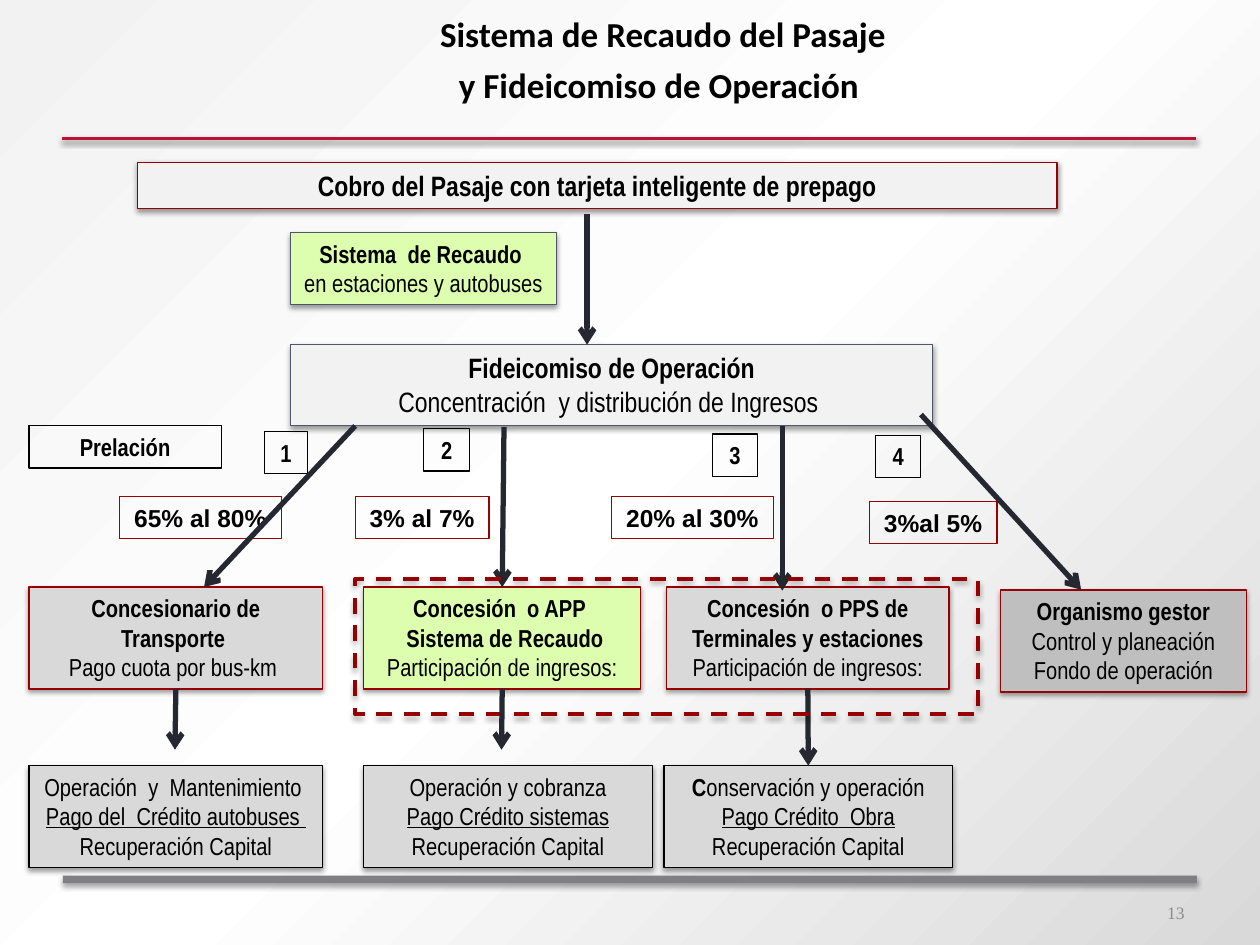
import pptx
import pptx.util
import pptx.dml.color
import pptx.enum.dml
import pptx.enum.shapes
import pptx.enum.text
import pptx.oxml
import pptx.oxml.ns
import lxml.etree

Pt = pptx.util.Pt
qn = pptx.oxml.ns.qn
ALIGN = pptx.enum.text.PP_ALIGN
SHAPES = pptx.enum.shapes

COLORS = {
    "black": "000000", "crimson": "BE0F34", "rule": "807F83", "red": "960000",
    "range": "990000", "slate": "50556B", "arrow": "252731", "pale": "F2F2F2",
    "light": "D9D9D9", "medium": "BFBFBF", "green": "DDFEAF", "number": "8C8C8C",
    "white": "FFFFFF",
}
BOLD = {"bold": True}
UNDERLINE = {"underline": True}
TOP, BOTTOM = 0, 2


def rgb(name):
    return pptx.dml.color.RGBColor.from_string(COLORS[name])


def add_span(para, text, size=14, font="Arial Narrow", color="black",
             bold=False, underline=False):
    span = para.add_run()
    span.text = text
    span.font.size = Pt(size)
    span.font.name = font
    span.font.color.rgb = rgb(color)
    span.font.bold = bold
    span.font.underline = underline


def add_shadow(effects, alpha=38, distance=1.6):
    outer = lxml.etree.SubElement(
        effects, qn("a:outerShdw"), blurRad=str(Pt(3.1)), dist=str(Pt(distance)),
        dir="5400000", rotWithShape="0")
    color = lxml.etree.SubElement(outer, qn("a:srgbClr"), val=COLORS["black"])
    lxml.etree.SubElement(color, qn("a:alpha"), val=str(alpha * 1000))


class Diagram:
    def __init__(self, slide):
        self.slide = slide
        self.shapes = slide.shapes

    def background(self, stops):
        """Fill the slide with a radial gradient centred on the lower right corner."""
        fill = self.slide.background.fill
        fill.gradient()
        gradient = self.slide.element.find(".//" + qn("a:gradFill"))
        for child in list(gradient):
            gradient.remove(child)
        stop_list = lxml.etree.SubElement(gradient, qn("a:gsLst"))
        for position, color in stops:
            stop = lxml.etree.SubElement(stop_list, qn("a:gs"), pos=str(position * 1000))
            lxml.etree.SubElement(stop, qn("a:srgbClr"), val=COLORS[color])
        circle = lxml.etree.SubElement(gradient, qn("a:path"), path="circle")
        lxml.etree.SubElement(circle, qn("a:fillToRect"), l="100000", t="100000")

    def box(self, left, top, width, height, lines=(), fill=None, edge=None,
            edge_width=0.75, shadow=None):
        """Draw a rectangle; each line is a list of (text, format) spans."""
        box = self.shapes.add_shape(SHAPES.MSO_SHAPE.RECTANGLE,
                                    Pt(left), Pt(top), Pt(width), Pt(height))
        if fill:
            box.fill.solid()
            box.fill.fore_color.rgb = rgb(fill)
        else:
            box.fill.background()
        if edge:
            box.line.color.rgb = rgb(edge)
            box.line.width = Pt(edge_width)
        else:
            box.line.fill.background()
        box.shadow.inherit = False
        if shadow is not None:
            add_shadow(box._element.spPr.find(qn("a:effectLst")), **shadow)
        if lines:
            self.fill_text(box.text_frame, lines)
        return box

    def fill_text(self, frame, lines, align=ALIGN.CENTER):
        frame.word_wrap = True
        frame.vertical_anchor = pptx.enum.text.MSO_ANCHOR.TOP
        frame.auto_size = pptx.enum.text.MSO_AUTO_SIZE.SHAPE_TO_FIT_TEXT
        for index, spans in enumerate(lines):
            para = frame.add_paragraph() if index else frame.paragraphs[0]
            para.alignment = align
            for text, style in spans:
                add_span(para, text, **style)

    def text(self, left, top, width, height, lines, align=ALIGN.CENTER):
        box = self.shapes.add_textbox(Pt(left), Pt(top), Pt(width), Pt(height))
        self.fill_text(box.text_frame, lines, align)
        return box.text_frame

    def line(self, start, end, color, width, shadow=None):
        line = self.shapes.add_connector(SHAPES.MSO_CONNECTOR.STRAIGHT,
                                         *(Pt(value) for value in start + end))
        line.line.color.rgb = rgb(color)
        line.line.width = Pt(width)
        effects = lxml.etree.SubElement(line._element.spPr, qn("a:effectLst"))
        if shadow is not None:
            add_shadow(effects, **shadow)
        return line

    def arrow(self, start, end, source=None, target=None):
        """Draw an arrow, joined to the bottom of source and the top of target if given."""
        arrow = self.line(start, end, "arrow", 3)
        lxml.etree.SubElement(arrow.line._get_or_add_ln(), qn("a:tailEnd"), type="arrow")
        if source is not None:
            arrow.begin_connect(source, BOTTOM)
        if target is not None:
            arrow.end_connect(target, TOP)


def main():
    deck = pptx.Presentation()
    deck.slide_width, deck.slide_height = Pt(720), Pt(540)
    page = Diagram(deck.slides.add_slide(deck.slide_layouts[6]))
    soft, deep = {}, {"alpha": 35, "distance": 1.8}

    page.background([(0, "light"), (50, "white"), (100, "pale")])
    page.line((35.5, 79.2), (683.5, 79.2), "crimson", 2, soft)
    page.box(36, 500.4, 648, 4.3, fill="rule", shadow=deep)

    page.box(78.5, 92.7, 525.6, 26.7,
             [[("Cobro del Pasaje con tarjeta inteligente de prepago", {"size": 16, **BOLD})]],
             "pale", "red", shadow=soft)
    page.box(166, 133, 152, 41.2,
             [[("Sistema  de Recaudo ", BOLD)], [("en estaciones y autobuses", {})]],
             "green", "slate", shadow=soft)
    page.box(166, 197, 367, 46.2,
             [[("Fideicomiso de Operación", {"size": 16, **BOLD})],
              [("Concentración  y distribución de Ingresos ", {"size": 16})]],
             "pale", "slate", shadow=soft)

    outcomes = []
    for left, width, first, credit in (
            (16.5, 168, [("Operación  y  Mantenimiento ", {})], "Pago del  Crédito autobuses "),
            (207.8, 165, [("Operación y cobranza", {})], "Pago Crédito sistemas"),
            (379.4, 165, [("C", BOLD), ("onservación y operación", {})], "Pago Crédito  Obra")):
        outcomes.append(page.box(
            left, 437.5, width, 58.2,
            [first, [(credit, UNDERLINE)], [("Recuperación Capital", {})]],
            "light", "black", shadow=soft))

    income = [("Participación de ingresos:", {})]
    recipients = []
    for left, top, width, fill, lines in (
            (16.5, 335.5, 168, "light",
             [[("Concesionario de Transporte ", BOLD)], [("Pago cuota por bus-km ", {})]]),
            (207.8, 335.5, 158.4, "green",
             [[("Concesión  o APP ", BOLD)], [(" Sistema de Recaudo", BOLD)], income]),
            (380.9, 335.5, 161.5, "light",
             [[("Concesión  o PPS de Terminales y estaciones", BOLD)], income]),
            (571.7, 337.2, 140.6, "medium",
             [[("Organismo gestor", BOLD)], [("Control y planeación", {})],
              [("Fondo de operación", {})]])):
        recipients.append(page.box(left, top, width, 58.2, lines, fill, "red", shadow=soft))
    transport, collection, stations, manager = recipients

    for text, left, top, width in (
            ("Prelación", 16.5, 243.2, 110), ("1", 151, 246.5, 24.7),
            ("2", 242, 245, 26.5), ("3", 407, 248, 26), ("4", 500.2, 248.7, 26)):
        page.box(left, top, width, 24.2, [[(text, BOLD)]], edge="black")
    for text, left, top, width in (
            ("65% al 80%", 68.2, 283.7, 92.6), ("3% al 7%", 203, 283.7, 76.4),
            ("20% al 30%", 349.4, 283.7, 92.6), ("3%al 5%", 496.7, 286.5, 73)):
        page.box(left, top, width, 24.2, [[(text, {"font": "Arial", **BOLD})]], edge="range")

    page.arrow((335.5, 122.4), (335.5, 197))
    page.arrow((203, 243.4), (116.6, 335.5))
    page.arrow((288, 244), (287, 335.5), target=collection)
    page.arrow((447, 243.4), (447, 337.5))
    page.arrow((526.3, 236.9), (617.8, 337))
    page.arrow((100, 394), (100, 428.4), source=transport)
    page.arrow((461.5, 394), (461.5, 437.5), stations, outcomes[2])
    frame = page.box(203, 331, 355.7, 77, edge="red", edge_width=2.25, shadow=deep)
    frame.line.dash_style = pptx.enum.dml.MSO_LINE.DASH
    page.arrow((287, 394), (286.6, 428.4), source=collection)

    heading = {"size": 20, "font": "Calibri", **BOLD}
    title = page.text(149.8, 12.2, 458, 51,
                      [[("Sistema de Recaudo del Pasaje", heading)],
                       [("y Fideicomiso de Operación ", heading)]])
    for para in title.paragraphs:
        para.line_spacing = 0.6
    title.paragraphs[1].space_before = Pt(14.6)

    number = page.text(516, 507, 168, 28.8,
                       [[("13", {"size": 10, "font": "Times New Roman", "color": "number"})]],
                       ALIGN.RIGHT)
    number.auto_size = pptx.enum.text.MSO_AUTO_SIZE.NONE
    number.vertical_anchor = pptx.enum.text.MSO_ANCHOR.MIDDLE

    deck.save("out.pptx")


if __name__ == "__main__":
    main()
